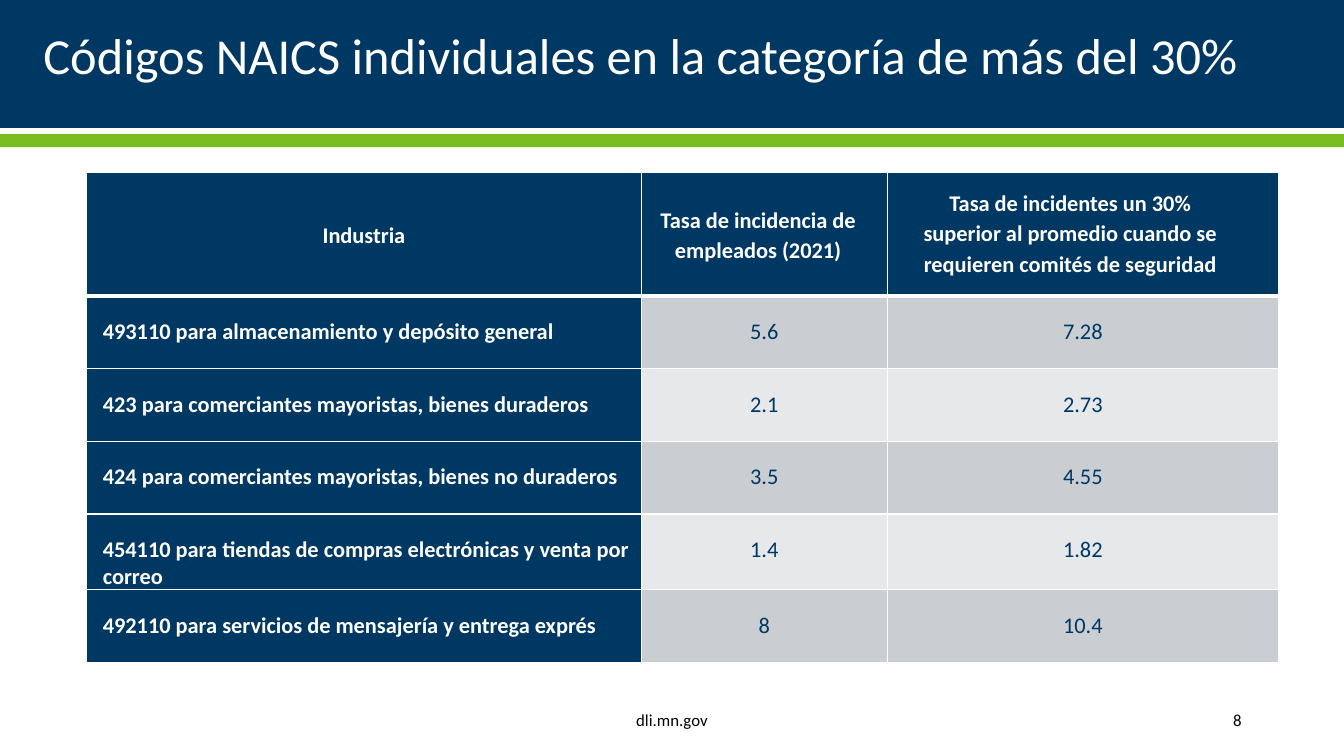
from lxml import etree
from pptx import Presentation
from pptx.dml.color import RGBColor
from pptx.enum import shapes, text
from pptx.oxml import ns
from pptx.util import Inches, Pt

NAVY = RGBColor(0x00, 0x38, 0x64)
GREEN = RGBColor(0x78, 0xBD, 0x20)
WHITE = RGBColor(0xFF, 0xFF, 0xFF)
BLACK = RGBColor(0x00, 0x00, 0x00)
BANDS = [RGBColor(0xCA, 0xCE, 0xD2), RGBColor(0xE7, 0xE8, 0xEA)]


def write(frame, words, size=16, color=WHITE, bold=False, align=text.PP_ALIGN.LEFT,
          spacing=None, margins=(0, 0, 0, 0)):
    """Fill a text frame; margins are left, top, right, bottom in inches."""
    frame.word_wrap = True
    paragraph = frame.paragraphs[0]
    paragraph.alignment = align
    paragraph.line_spacing = spacing
    run = paragraph.add_run()
    run.text = words
    run.font.name = "Calibri"
    run.font.size = Pt(size)
    run.font.bold = bold
    run.font.color.rgb = color
    owner = frame if cell_of.get(frame) is None else cell_of[frame]
    (owner.margin_left, owner.margin_top,
     owner.margin_right, owner.margin_bottom) = map(Inches, margins)


def set_borders(cell, top, bottom):
    """Draw white cell edges; top and bottom widths are in points."""
    properties = cell._tc.get_or_add_tcPr()
    edges = [("lnL", 1), ("lnR", 1), ("lnT", top), ("lnB", bottom)]
    for place, (edge, width) in enumerate(edges):
        line = etree.Element(ns.qn(f"a:{edge}"), w=str(Pt(width)))
        fill = etree.SubElement(line, ns.qn("a:solidFill"))
        etree.SubElement(fill, ns.qn("a:srgbClr"), val=str(WHITE))
        properties.insert(place, line)


cell_of = {}  # cells, unlike text boxes, hold the margins of their frame

deck = Presentation()
deck.slide_width, deck.slide_height = Inches(13.33), Inches(7.5)
slide = deck.slides.add_slide(deck.slide_layouts[6])

# Header bands
for top, height, color in [(1.33, 0.13, GREEN), (0, 1.27, NAVY)]:
    band = slide.shapes.add_shape(shapes.MSO_SHAPE.RECTANGLE, 0, Inches(top),
                                  deck.slide_width, Inches(height))
    band.shadow.inherit = False
    band.fill.solid()
    band.fill.fore_color.rgb = color
    band.line.fill.background()

# Title and footer
captions = [
    ("Códigos NAICS individuales en la categoría de más del 30%", (0.42, 0.02, 12.42, 0.83),
     dict(size=36, margins=(0.01, 0.22, 0, 0))),
    ("dli.mn.gov", (6.3, 7.07, 0.74, 0.19),
     dict(size=12, color=BLACK, spacing=Pt(12.4), margins=(0.01, 0, 0, 0))),
    ("8", (12.1, 7.07, 0.27, 0.19),
     dict(size=12, color=BLACK, spacing=Pt(12.4), margins=(0.13, 0, 0, 0))),
]
for words, area, style in captions:
    box = slide.shapes.add_textbox(*map(Inches, area))
    write(box.text_frame, words, **style)

# Incident rates
headings = [
    ("Industria", None, (0, 0.49, 0, 0)),
    ("Tasa de incidencia de empleados (2021)", 1.12, (0.17, 0.31, 0.29, 0)),
    ("Tasa de incidentes un 30% superior al promedio cuando se requieren comités de seguridad",
     1.12, (0.29, 0.14, 0.54, 0)),
]
industries = [
    ("493110 para almacenamiento y depósito general", "5.6", "7.28"),
    ("423 para comerciantes mayoristas, bienes duraderos", "2.1", "2.73"),
    ("424 para comerciantes mayoristas, bienes no duraderos", "3.5", "4.55"),
    ("454110 para tiendas de compras electrónicas y venta por correo", "1.4", "1.82"),
    ("492110 para servicios de mensajería y entrega exprés", "8", "10.4"),
]
rates = slide.shapes.add_table(len(industries) + 1, len(headings), Inches(0.86), Inches(1.71),
                               Inches(11.82), Inches(4.83)).table
for column, width in zip(rates.columns, [5.5, 2.44, 3.88]):
    column.width = Inches(width)
for index, row in enumerate(rates.rows):
    row.height = Inches(0.72 if index else 1.23)
    for position, cell in enumerate(row.cells):
        is_label = index == 0 or position == 0
        cell.fill.solid()
        cell.fill.fore_color.rgb = NAVY if is_label else BANDS[(index - 1) % 2]
        set_borders(cell, top=3 if index == 1 else 1, bottom=1 if index else 3)
        if index == 0:
            words, spacing, margins = headings[position]
        else:
            words, spacing = industries[index - 1][position], None
            margins = (0 if position else 0.16, 0.22, 0, 0)
        frame = cell.text_frame
        cell_of[frame] = cell
        write(frame, words, color=WHITE if is_label else NAVY, bold=is_label, spacing=spacing,
              align=text.PP_ALIGN.LEFT if index and not position else text.PP_ALIGN.CENTER,
              margins=margins)

deck.save("out.pptx")
